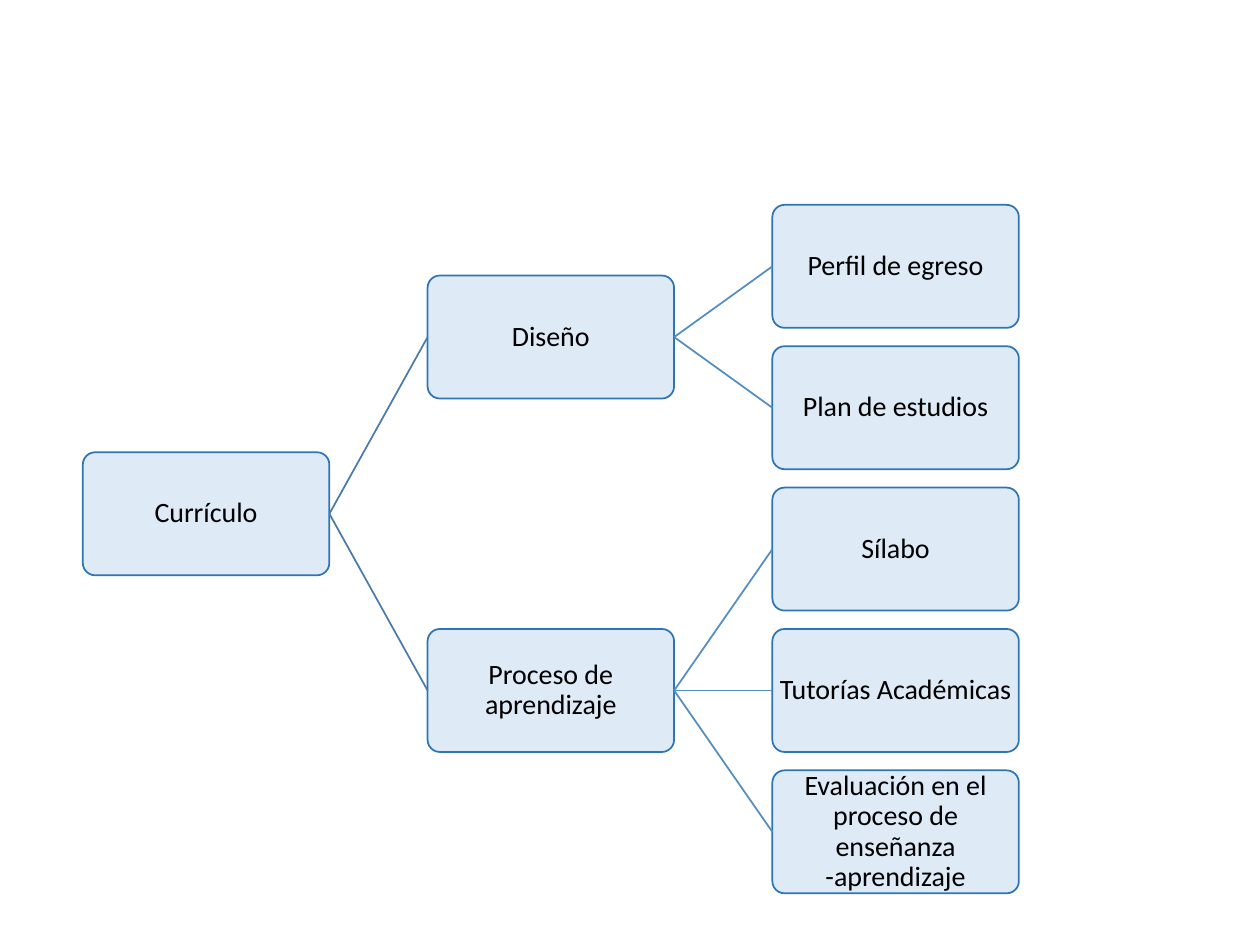
from pptx import Presentation
from pptx.dml.color import RGBColor
from pptx.enum.shapes import MSO_CONNECTOR, MSO_SHAPE
from pptx.enum.text import MSO_ANCHOR as Anchor, PP_ALIGN as Align
from pptx.oxml.ns import qn
from pptx.util import Cm, Pt
from lxml.etree import SubElement

NODE_W, NODE_H = 4.97, 2.48
COL_STEP, ROW_STEP = 6.95, 2.85
LEFT_SITE, RIGHT_SITE = 1, 3
LINK_COLORS = ["497CAB", "538DC1"]  # by level of the parent

TREE = ("Currículo", [
    ("Diseño", [
        ("Perfil de egreso", []),
        ("Plan de estudios", []),
    ]),
    ("Proceso de aprendizaje", [
        ("Sílabo", []),
        ("Tutorías Académicas", []),
        ("Evaluación en el proceso de enseñanza -aprendizaje", []),
    ]),
])


def color(value):
    return RGBColor.from_string(value)


def add_node(slide, text, x, y):
    sp = slide.shapes.add_shape(MSO_SHAPE.ROUNDED_RECTANGLE,
                                Cm(x), Cm(y), Cm(NODE_W), Cm(NODE_H))
    sp.adjustments[0] = 0.1
    sp.shadow.inherit = False
    sp.fill.solid()
    sp.fill.fore_color.rgb = color("DEEBF7")
    sp.line.color.rgb = color("2E75B6")
    sp.line.width = Pt(1)

    tf = sp.text_frame
    tf.word_wrap = True
    tf.vertical_anchor = Anchor.MIDDLE
    tf.margin_left = tf.margin_right = tf.margin_top = tf.margin_bottom = Cm(0.03)
    p = tf.paragraphs[0]
    p.text = text
    p.alignment = Align.CENTER
    p.line_spacing = 0.9
    p.font.name = "Calibri"
    p.font.size = Pt(16)
    p.font.color.rgb = color("000000")
    return sp


def add_link(slide, parent, child, line_color):
    link = slide.shapes.add_connector(MSO_CONNECTOR.STRAIGHT, 0, 0, 0, 0)
    link.begin_connect(parent, RIGHT_SITE)
    link.end_connect(child, LEFT_SITE)
    link.line.color.rgb = color(line_color)
    link.line.width = Pt(1)
    SubElement(link._element.spPr, qn("a:effectLst"))


def add_tree(slide, node, left, top, level=0):
    """Place a branch; return its root shape, the root's top and the next free row."""
    text, children = node
    x = left + level * COL_STEP
    if not children:
        return add_node(slide, text, x, top), top, top + ROW_STEP

    shapes, tops = [], []
    for child in children:
        sp, y, top = add_tree(slide, child, left, top, level + 1)
        shapes.append(sp)
        tops.append(y)

    # A parent sits midway between its first and last child
    y = (tops[0] + tops[-1]) / 2
    parent = add_node(slide, text, x, y)
    for sp in shapes:
        add_link(slide, parent, sp, LINK_COLORS[level])
    return parent, y, top


def main():
    prs = Presentation()
    prs.slide_width, prs.slide_height = Cm(25.4), Cm(19.05)
    slide = prs.slides.add_slide(prs.slide_layouts[6])

    # Curriculum hierarchy
    add_tree(slide, TREE, left=1.67, top=4.13)
    prs.save("out.pptx")


if __name__ == "__main__":
    main()
